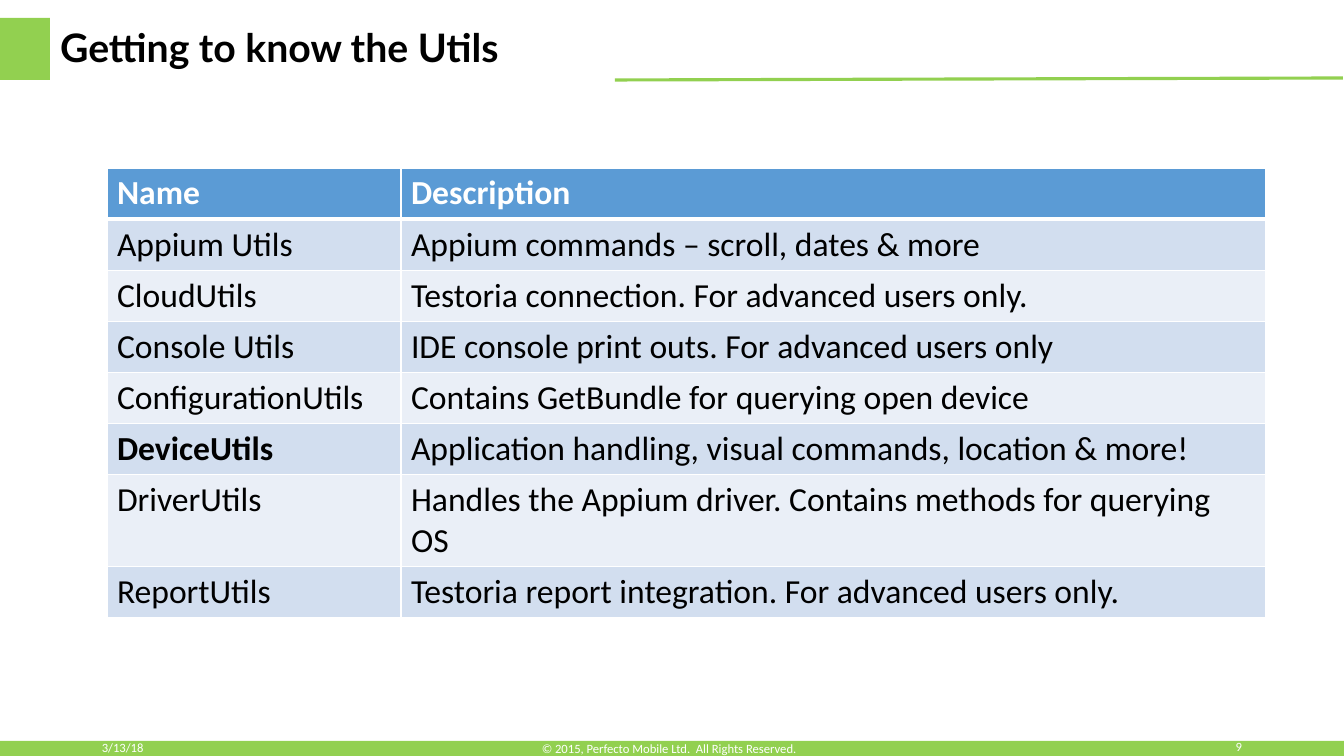
"""Build the slide that introduces the Utils classes in a table."""
import pptx
import pptx.util
import pptx.dml.color
import pptx.enum.shapes
import pptx.enum.text
import pptx.oxml
import pptx.oxml.ns
import lxml.etree

GREEN = pptx.dml.color.RGBColor(0x92, 0xD0, 0x50)
BLUE = pptx.dml.color.RGBColor(0x5B, 0x9B, 0xD5)
PALE = pptx.dml.color.RGBColor(0xD2, 0xDE, 0xEF)
PALER = pptx.dml.color.RGBColor(0xEA, 0xEF, 0xF7)
WHITE = pptx.dml.color.RGBColor(0xFF, 0xFF, 0xFF)
BLACK = pptx.dml.color.RGBColor(0, 0, 0)
MIDDLE = pptx.enum.text.MSO_ANCHOR.MIDDLE
ALIGN = pptx.enum.text.PP_ALIGN
QN = pptx.oxml.ns.qn


def px(*lengths):
    """Turn pixels into EMU."""
    return [pptx.util.Emu(round(length * 914400 / 100.8)) for length in lengths]


def write(frame, words, size, color, bold=False, font="Calibri", align=ALIGN.LEFT):
    """Fill a text frame with one formatted paragraph."""
    paragraph = frame.paragraphs[0]
    paragraph.alignment = align
    run = paragraph.add_run()
    run.text = words
    look = {"name": font, "size": pptx.util.Pt(size), "bold": bold}
    for key, value in look.items():
        setattr(run.font, key, value)
    run.font.color.rgb = color


deck = pptx.Presentation()
deck.slide_width, deck.slide_height = px(1344, 756)
slide = deck.slides.add_slide(deck.slide_layouts[5])

for place in [(0, 18, 50, 62), (0, 741, 1344, 15)]:
    band = slide.shapes.add_shape(pptx.enum.shapes.MSO_SHAPE.RECTANGLE, *px(*place))
    band.shadow.inherit = False
    band.fill.solid()
    band.fill.fore_color.rgb = GREEN
    band.line.fill.background()

title_rule = slide.shapes.add_connector(
    pptx.enum.shapes.MSO_CONNECTOR.STRAIGHT, *px(615, 80, 1343, 78))
title_rule.line.color.rgb = GREEN
title_rule.line.width = pptx.util.Pt(2.25)
lxml.etree.SubElement(title_rule._element.spPr, QN("a:effectLst"))

title = slide.shapes.title
title.left, title.top, title.width, title.height = px(50, 6, 564, 88)
title.text_frame.vertical_anchor = MIDDLE
title.text_frame.word_wrap = True
write(title.text_frame, "Getting to know the Utils", 28, BLACK, True, "Lato")
title.text_frame.paragraphs[0].line_spacing = 0.9

utils = [
    ("Name", "Description"),
    ("Appium Utils", "Appium commands – scroll, dates & more"),
    ("CloudUtils", "Testoria connection. For advanced users only."),
    ("Console Utils", "IDE console print outs. For advanced users only"),
    ("ConfigurationUtils", "Contains GetBundle for querying open device"),
    ("DeviceUtils", "Application handling, visual commands, location & more!"),
    ("DriverUtils", "Handles the Appium driver. Contains methods for querying OS"),
    ("ReportUtils", "Testoria report integration. For advanced users only."),
]
table = slide.shapes.add_table(len(utils), 2, *px(107, 168, 1159, 408)).table
for column, width in zip(table.columns, px(294, 865)):
    column.width = width

for row, entry in enumerate(utils):
    table.rows[row].height = px(51)[0]
    for column, words in enumerate(entry):
        cell = table.cell(row, column)
        properties = cell._tc.get_or_add_tcPr()
        for side in "LRTB":
            thick = (row, side) in [(0, "B"), (1, "T")]
            border = lxml.etree.SubElement(
                properties, QN(f"a:ln{side}"), w="38100" if thick else "12700")
            paint = lxml.etree.SubElement(border, QN("a:solidFill"))
            lxml.etree.SubElement(paint, QN("a:srgbClr"), val=str(WHITE))
        cell.fill.solid()
        cell.fill.fore_color.rgb = BLUE if row == 0 else PALE if row % 2 else PALER
        write(cell.text_frame, words, 24, BLACK if row else WHITE,
              row == 0 or words == "DeviceUtils")

footers = [
    ("3/13/18", (92, 732, 302, 31), ALIGN.LEFT),
    ("9", (950, 733, 302, 27), ALIGN.RIGHT),
    ("© 2015, Perfecto Mobile Ltd.  All Rights Reserved.", (442, 733, 454, 31), ALIGN.CENTER),
]
for words, place, align in footers:
    footer = slide.shapes.add_textbox(*px(*place)).text_frame
    footer.word_wrap = True
    footer.vertical_anchor = MIDDLE
    write(footer, words, 9, WHITE, align=align)

deck.save("out.pptx")
